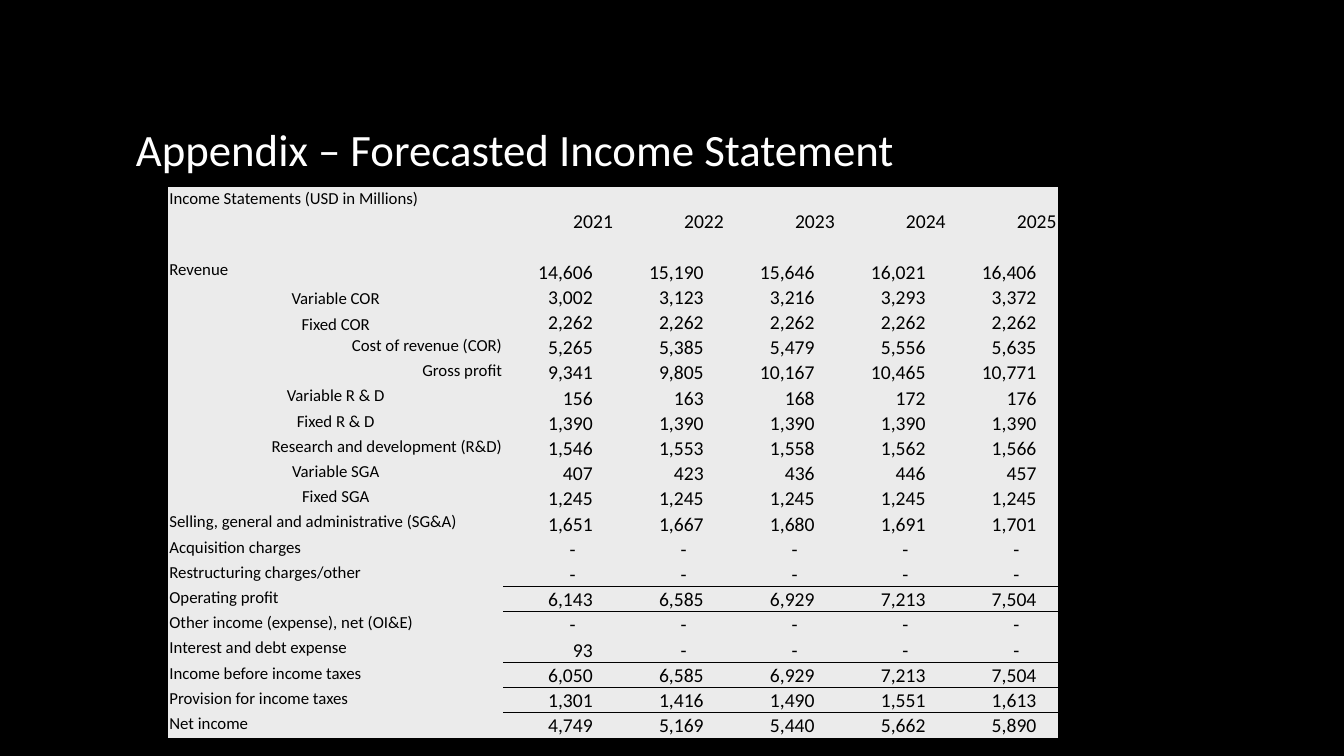
"""Build the appendix slide with the forecasted income statement table."""
from lxml import etree
from pptx import Presentation
from pptx.dml.color import RGBColor
from pptx.enum.text import MSO_ANCHOR, PP_ALIGN
from pptx.oxml import parse_xml
from pptx.oxml.ns import nsdecls, qn
from pptx.util import Inches, Pt

COLORS = {"background": "000000", "title": "FFFFFF", "cell": "EBEBEB", "ink": "000000"}
LEFT, CENTER, RIGHT = PP_ALIGN.LEFT, PP_ALIGN.CENTER, PP_ALIGN.RIGHT
NO_STYLE = "{2D5ABB26-0587-4C30-8999-92F81FD0307C}"

YEARS = ["2021", "2022", "2023", "2024", "2025"]
DASHES = ["-"] * 5
STATEMENT = [
    ("Income Statements (USD in Millions)", LEFT, YEARS),
    ("", LEFT, [""] * 5),
    ("Revenue", LEFT, ["14,606", "15,190", "15,646", "16,021", "16,406"]),
    ("Variable COR", CENTER, ["3,002", "3,123", "3,216", "3,293", "3,372"]),
    ("Fixed COR", CENTER, ["2,262"] * 5),
    ("Cost of revenue (COR)", RIGHT, ["5,265", "5,385", "5,479", "5,556", "5,635"]),
    ("Gross profit", RIGHT, ["9,341", "9,805", "10,167", "10,465", "10,771"]),
    ("Variable R & D", CENTER, ["156", "163", "168", "172", "176"]),
    ("Fixed R & D", CENTER, ["1,390"] * 5),
    ("Research and development (R&D)", RIGHT, ["1,546", "1,553", "1,558", "1,562", "1,566"]),
    ("Variable SGA", CENTER, ["407", "423", "436", "446", "457"]),
    ("Fixed SGA", CENTER, ["1,245"] * 5),
    ("Selling, general and administrative (SG&A)", LEFT,
     ["1,651", "1,667", "1,680", "1,691", "1,701"]),
    ("Acquisition charges", LEFT, DASHES),
    ("Restructuring charges/other", LEFT, DASHES),
    ("Operating profit", LEFT, ["6,143", "6,585", "6,929", "7,213", "7,504"]),
    ("Other income (expense), net (OI&E)", LEFT, DASHES),
    ("Interest and debt expense", LEFT, ["93", "-", "-", "-", "-"]),
    ("Income before income taxes", LEFT, ["6,050", "6,585", "6,929", "7,213", "7,504"]),
    ("Provision for income taxes", LEFT, ["1,301", "1,416", "1,490", "1,551", "1,613"]),
    ("Net income", LEFT, ["4,749", "5,169", "5,440", "5,662", "5,890"]),
]
BOTTOM_LABELS = {"Variable COR", "Fixed COR"}
TOTALS = {"Operating profit", "Income before income taxes", "Net income"}


def write(frame, text, size=14, color="ink", align=LEFT):
    """Write one formatted paragraph; an empty one keeps the size for its line height."""
    para = frame.paragraphs[0]
    para.alignment = align
    if text:
        span = para.add_run()
        span.text = text
        span.font.name = "Calibri"
        span.font.size = Pt(size)
        span.font.color.rgb = RGBColor.from_string(COLORS[color])
    else:
        etree.SubElement(para._p, qn("a:endParaRPr"), sz=str(size * 100))


def rule(cell, side):
    """Draw a one-point line along the top (lnT) or bottom (lnB) of a cell."""
    line = parse_xml(
        f'<a:{side} {nsdecls("a")} w="12700"><a:solidFill>'
        f'<a:srgbClr val="{COLORS["ink"]}"/></a:solidFill></a:{side}>')
    cell._tc.get_or_add_tcPr().insert(0, line)


deck = Presentation()
deck.slide_width, deck.slide_height = Inches(13.33), Inches(7.5)
page = deck.slides.add_slide(deck.slide_layouts[6])
page.background.fill.solid()
page.background.fill.fore_color.rgb = RGBColor.from_string(COLORS["background"])

title = page.shapes.add_textbox(Inches(1.25), Inches(0.67), Inches(10.83), Inches(1.61))
title.text_frame.word_wrap = True
title.text_frame.vertical_anchor = MSO_ANCHOR.MIDDLE
write(title.text_frame, "Appendix – Forecasted Income Statement", size=32, color="title")

holder = page.shapes.add_table(
    len(STATEMENT), len(YEARS) + 1, Inches(1.67), Inches(1.86), Inches(8.82), Inches(5.46))
table = holder.table
table.first_row = table.horz_banding = False
table._tbl.tblPr.find(qn("a:tableStyleId")).text = NO_STYLE
for index, column in enumerate(table.columns):
    column.width = Inches(1.1 if index else 3.32)
for index, row in enumerate(table.rows):
    row.height = Inches(0.25 if index else 0.46)

for row_index, (label, label_align, values) in enumerate(STATEMENT):
    for column_index, text in enumerate([label, *values]):
        cell = table.cell(row_index, column_index)
        cell.fill.solid()
        cell.fill.fore_color.rgb = RGBColor.from_string(COLORS["cell"])
        cell.margin_left = cell.margin_top = cell.margin_right = Inches(0.01)
        cell.margin_bottom = Inches(0)
        if column_index == 0:
            at_bottom = label in BOTTOM_LABELS
            cell.vertical_anchor = MSO_ANCHOR.BOTTOM if at_bottom else MSO_ANCHOR.TOP
            write(cell.text_frame, text, size=12, align=label_align)
            continue
        cell.vertical_anchor = MSO_ANCHOR.BOTTOM
        if row_index > 0:
            cell.margin_right = Inches(0.38 if text == "-" else 0.21)
        write(cell.text_frame, text, align=RIGHT)
        if label in TOTALS:
            rule(cell, "lnT")
            rule(table.cell(row_index - 1, column_index), "lnB")

deck.save("out.pptx")
